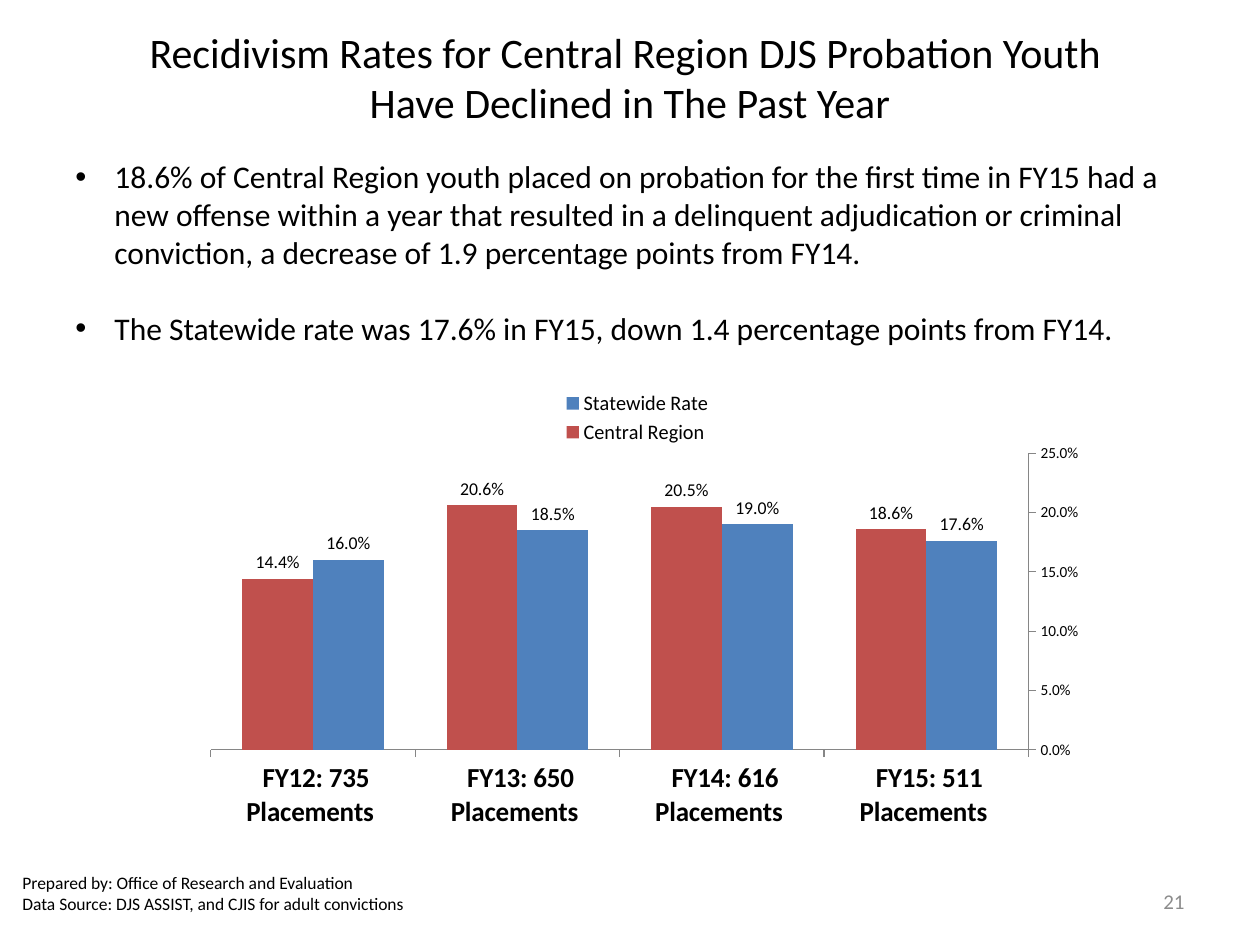
from lxml.etree import SubElement
from pptx import Presentation
from pptx.chart.data import CategoryChartData
from pptx.dml.color import RGBColor
from pptx.enum.chart import (XL_AXIS_CROSSES, XL_CHART_TYPE, XL_LABEL_POSITION,
                             XL_LEGEND_POSITION, XL_TICK_MARK)
from pptx.enum.text import MSO_ANCHOR, PP_ALIGN
from pptx.oxml import parse_xml
from pptx.oxml.ns import nsdecls, qn
from pptx.util import Inches, Pt


def style(font, size, color="000000", bold=False):
    font.name, font.size, font.bold = "Calibri", Pt(size), bold
    font.color.rgb = RGBColor.from_string(color)


def add_text(slide, box, lines, size, color="000000", align=PP_ALIGN.LEFT):
    frame = slide.shapes.add_textbox(*map(Inches, box)).text_frame
    frame.word_wrap = True
    frame.vertical_anchor = MSO_ANCHOR.MIDDLE
    frame.text = "\n".join(lines)
    for paragraph in frame.paragraphs:
        paragraph.alignment = align
        style(paragraph.font, size, color)
    return frame.paragraphs


presentation = Presentation()
presentation.slide_width, presentation.slide_height = Inches(10), Inches(7.5)
slide = presentation.slides.add_slide(presentation.slide_layouts[5])

# Title
title = slide.shapes.title
title.left, title.top, title.width, title.height = map(Inches, (0, 0.3, 10, 0.62))
title.text_frame.text = ("Recidivism Rates for Central Region DJS Probation Youth \v"
                         "Have Declined in The Past Year")
title.text_frame.vertical_anchor = MSO_ANCHOR.MIDDLE
heading = title.text_frame.paragraphs[0]
heading.alignment = PP_ALIGN.CENTER
style(heading.font, 24)

# Findings
findings = add_text(slide, (0.5, 1.29, 9.08, 1.42), [
    "18.6% of Central Region youth placed on probation for the first time in FY15 "
    "had a new offense within a year that resulted in a delinquent adjudication or "
    "criminal conviction, a decrease of 1.9 percentage points from FY14.",
    "The Statewide rate was 17.6% in FY15, down 1.4 percentage points from FY14.",
], 18)
findings[0].space_after = Pt(22)
for finding in findings:
    properties = finding._p.get_or_add_pPr()
    properties.set("marL", str(Inches(0.31)))
    properties.set("indent", str(Inches(-0.31)))
    SubElement(properties, qn("a:buFont"), typeface="Arial")
    SubElement(properties, qn("a:buChar"), char="•")

# Slide number and source note
add_text(slide, (7.17, 6.95, 2.33, 0.4), ["21"], 12, "8C8C8C", PP_ALIGN.RIGHT)
add_text(slide, (0.08, 6.83, 3.42, 0.52), [
    "Prepared by: Office of Research and Evaluation",
    "Data Source: DJS ASSIST, and CJIS for adult convictions",
], 10)

# Recidivism rates, latest year first on a reversed axis
placements = {"FY15": 511, "FY14": 616, "FY13": 650, "FY12": 735}
rates = [("Statewide Rate", (0.176, 0.19, 0.185, 0.16), "4F81BD"),
         ("Central Region", (0.186, 0.205, 0.206, 0.144), "C0504D")]
chart_data = CategoryChartData(number_format="0.0%")
chart_data.categories = [f" {year}: {count} Placements "
                         for year, count in placements.items()]
for name, values, _ in rates:
    chart_data.add_series(name, values)
chart = slide.shapes.add_chart(
    XL_CHART_TYPE.COLUMN_CLUSTERED, *map(Inches, (1.25, 3, 7.31, 3.58)),
    chart_data).chart
chart.has_title = False
style(chart.font, 10)

plot = chart.plots[0]
plot.gap_width, plot.overlap, plot.vary_by_categories = 89, 0, False
for series, (_, _, color) in zip(plot.series, rates):
    series.format.fill.solid()
    series.format.fill.fore_color.rgb = RGBColor.from_string(color)
    labels = series.data_labels
    labels.show_value = True
    labels.position = XL_LABEL_POSITION.OUTSIDE_END
    labels.number_format, labels.number_format_is_linked = "0.0%", False
    style(labels.font, 10.5)

# Axes
years, percent = chart.category_axis, chart.value_axis
years.reverse_order = True
years.crosses = XL_AXIS_CROSSES.MAXIMUM
percent.minimum_scale, percent.maximum_scale, percent.major_unit = 0, 0.25, 0.05
percent.tick_labels.number_format = "0.0%"
percent.tick_labels.number_format_is_linked = False
for axis, size, bold in ((years, 16, True), (percent, 9, False)):
    axis.has_major_gridlines = False
    axis.major_tick_mark = XL_TICK_MARK.OUTSIDE
    axis.minor_tick_mark = XL_TICK_MARK.NONE
    axis.format.line.color.rgb = RGBColor.from_string("868686")
    style(axis.tick_labels.font, size, bold=bold)

# Legend
chart.has_legend = True
legend = chart.legend
legend.position = XL_LEGEND_POSITION.RIGHT
legend.include_in_layout = False
style(legend.font, 12)

# Places of plot and legend, as fractions of the chart
plot_area = chart._chartSpace.chart.plotArea
for old_layout in plot_area.findall(qn("c:layout")):
    plot_area.remove(old_layout)
for parent, index, target, place in (
        (plot_area, 0, '<c:layoutTarget val="inner"/>', (0.06, 0.17, 0.92, 0.67)),
        (legend._element, 1, "", (0.44, 0.02, 0.2, 0.14))):
    sizes = "".join(f'<c:{key} val="{value}"/>' for key, value in zip("xywh", place))
    parent.insert(index, parse_xml(
        f'<c:layout {nsdecls("c")}><c:manualLayout>{target}<c:xMode val="edge"/>'
        f'<c:yMode val="edge"/>{sizes}</c:manualLayout></c:layout>'))

presentation.save("out.pptx")
